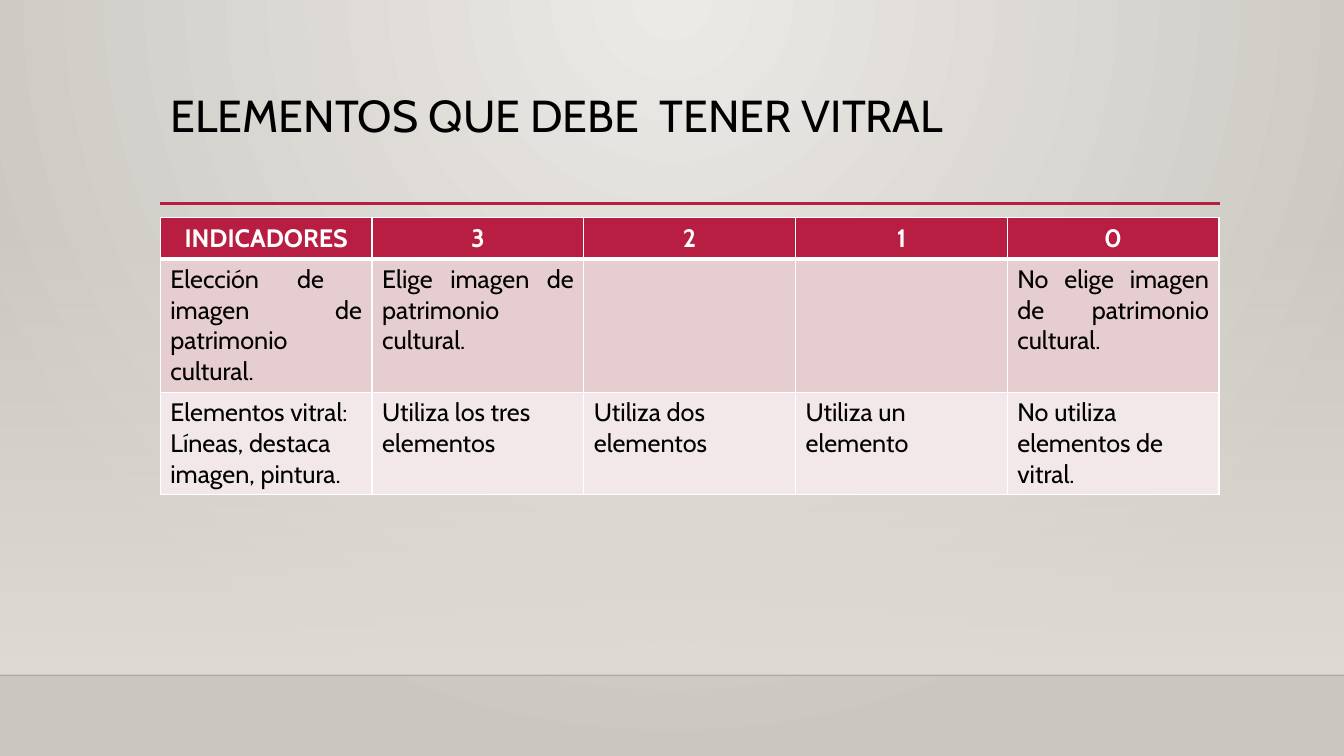
from dataclasses import dataclass

import lxml.etree
import pptx
import pptx.dml.color
import pptx.enum.shapes
import pptx.enum.text
import pptx.oxml.ns
import pptx.util

Inches = pptx.util.Inches
qn = pptx.oxml.ns.qn
Align = pptx.enum.text.PP_ALIGN

COLORS = {
    "black": "000000",
    "white": "FFFFFF",
    "crimson": "B71E42",
    "rose": "E6CDCF",
    "pale_rose": "F3E8E9",
    "glow": "ECEAE7",
    "stone": "CAC7C1",
    "floor": "DFDBD5",
    "floor_edge": "000001",
}
FONT = "Cabin"
SLIDE_WIDTH, SLIDE_HEIGHT = 13.33, 7.5
CONTENT_LEFT, CONTENT_WIDTH = 1.59, 10.5
FLOOR_TOP, FLOOR_EDGE = 2.21, 6.7


@dataclass(frozen=True)
class Rule:
    left: float
    right: float
    top: float
    color: str
    width: float
    opacity: int = 100


@dataclass(frozen=True)
class TableRow:
    texts: tuple[str, ...]
    height: float
    fill: str
    alignment: Align
    top_border: float = 1
    bottom_border: float = 1
    color: str = "black"
    bold: bool = False


RULES = (
    Rule(0, SLIDE_WIDTH, FLOOR_EDGE, "floor_edge", 1, 20),
    Rule(CONTENT_LEFT, 12.1, 2.02, "crimson", 2.5),
)
ROWS = (
    TableRow(("INDICADORES", "3", "2", "1", "0"), 0.41, "crimson", Align.CENTER,
             bottom_border=3, color="white", bold=True),
    TableRow(("Elección de  imagen de patrimonio cultural.",
              "Elige imagen de patrimonio cultural.", "", "",
              "No elige imagen de patrimonio cultural."),
             1.31, "rose", Align.JUSTIFY, top_border=3),
    TableRow(("Elementos vitral:\nLíneas, destaca imagen, pintura.",
              "Utiliza los tres elementos", "Utiliza dos elementos",
              "Utiliza un elemento", "No utiliza elementos de vitral."),
             1.0, "pale_rose", Align.LEFT),
)


def rgb(name: str) -> pptx.dml.color.RGBColor:
    return pptx.dml.color.RGBColor.from_string(COLORS[name])


def set_opacity(color_element, percent: int) -> None:
    alpha = lxml.etree.SubElement(color_element, qn("a:alpha"))
    alpha.set("val", str(percent * 1000))


def fill_gradient(fill, names: tuple[str, str]) -> None:
    fill.gradient()
    for stop, name, position in zip(fill.gradient_stops, names, (0, 1)):
        stop.color.rgb = rgb(name)
        stop.position = position


def format_text(text_frame, alignment: Align, size: float, color: str,
                bold: bool = False) -> None:
    font_format = {"name": FONT, "size": pptx.util.Pt(size), "bold": bold}
    for paragraph in text_frame.paragraphs:
        paragraph.alignment = alignment
        for run in paragraph.runs:
            for attribute, value in font_format.items():
                setattr(run.font, attribute, value)
            run.font.color.rgb = rgb(color)


def paint_background(slide) -> None:
    """Radial glow spreading from the top centre of the slide."""
    fill_gradient(slide.background.fill, ("glow", "stone"))
    gradient = slide.element.xpath(".//p:bg//a:gradFill")[0]
    gradient.remove(gradient.find(qn("a:lin")))
    circle = lxml.etree.SubElement(gradient, qn("a:path"))
    circle.set("path", "circle")
    center = lxml.etree.SubElement(circle, qn("a:fillToRect"))
    for side, value in {"l": 43000, "t": 0, "r": 43000, "b": 100000}.items():
        center.set(side, str(value))


def add_floor_fade(slide) -> None:
    fade = slide.shapes.add_shape(
        pptx.enum.shapes.MSO_SHAPE.RECTANGLE, 0, Inches(FLOOR_TOP),
        Inches(SLIDE_WIDTH), Inches(FLOOR_EDGE - FLOOR_TOP))
    fade.shadow.inherit = False
    fade.line.fill.background()
    fill_gradient(fade.fill, ("floor", "floor"))
    fade.fill.gradient_angle = 270
    set_opacity(fade.element.xpath(".//a:gs/a:srgbClr")[0], 0)


def add_rule(slide, rule: Rule) -> None:
    line = slide.shapes.add_connector(
        pptx.enum.shapes.MSO_CONNECTOR.STRAIGHT, Inches(rule.left),
        Inches(rule.top), Inches(rule.right), Inches(rule.top))
    line.line.color.rgb = rgb(rule.color)
    line.line.width = pptx.util.Pt(rule.width)
    if rule.opacity < 100:
        set_opacity(line.element.xpath(".//a:ln//a:srgbClr")[0], rule.opacity)
    lxml.etree.SubElement(line.element.spPr, qn("a:effectLst"))


def format_title(slide) -> None:
    title = slide.shapes.title
    placement = {"left": CONTENT_LEFT, "top": 0.88, "width": CONTENT_WIDTH, "height": 1.15}
    for attribute, value in placement.items():
        setattr(title, attribute, Inches(value))
    text_frame = title.text_frame
    text_frame.text = "ELEMENTOS QUE DEBE  TENER VITRAL"
    text_frame.vertical_anchor = pptx.enum.text.MSO_ANCHOR.TOP
    text_frame.auto_size = pptx.enum.text.MSO_AUTO_SIZE.NONE
    text_frame.paragraphs[0].line_spacing = 0.9
    format_text(text_frame, Align.LEFT, 32, "black")


def add_borders(cell, row: TableRow) -> None:
    properties = cell._tc.get_or_add_tcPr()
    widths = {"L": 1, "R": 1, "T": row.top_border, "B": row.bottom_border}
    for side, width in widths.items():
        border = lxml.etree.SubElement(properties, qn(f"a:ln{side}"))
        border.set("w", str(pptx.util.Pt(width)))
        fill = lxml.etree.SubElement(border, qn("a:solidFill"))
        lxml.etree.SubElement(fill, qn("a:srgbClr")).set("val", COLORS["white"])


def add_rubric(slide) -> None:
    column_count = len(ROWS[0].texts)
    table = slide.shapes.add_table(
        len(ROWS), column_count, Inches(CONTENT_LEFT), Inches(2.16),
        Inches(CONTENT_WIDTH), Inches(sum(row.height for row in ROWS))).table
    table.horz_banding = False
    for column in table.columns:
        column.width = Inches(CONTENT_WIDTH / column_count)
    for row_index, row in enumerate(ROWS):
        table.rows[row_index].height = Inches(row.height)
        for column_index, text in enumerate(row.texts):
            cell = table.cell(row_index, column_index)
            add_borders(cell, row)
            cell.fill.solid()
            cell.fill.fore_color.rgb = rgb(row.fill)
            cell.text = text
            format_text(cell.text_frame, row.alignment, 18, row.color, row.bold)


def main() -> None:
    presentation = pptx.Presentation()
    presentation.slide_width = Inches(SLIDE_WIDTH)
    presentation.slide_height = Inches(SLIDE_HEIGHT)
    slide = presentation.slides.add_slide(presentation.slide_layouts.get_by_name("Title Only"))
    paint_background(slide)
    add_floor_fade(slide)
    for rule in RULES:
        add_rule(slide, rule)
    format_title(slide)
    add_rubric(slide)
    presentation.save("out.pptx")


if __name__ == "__main__":
    main()
